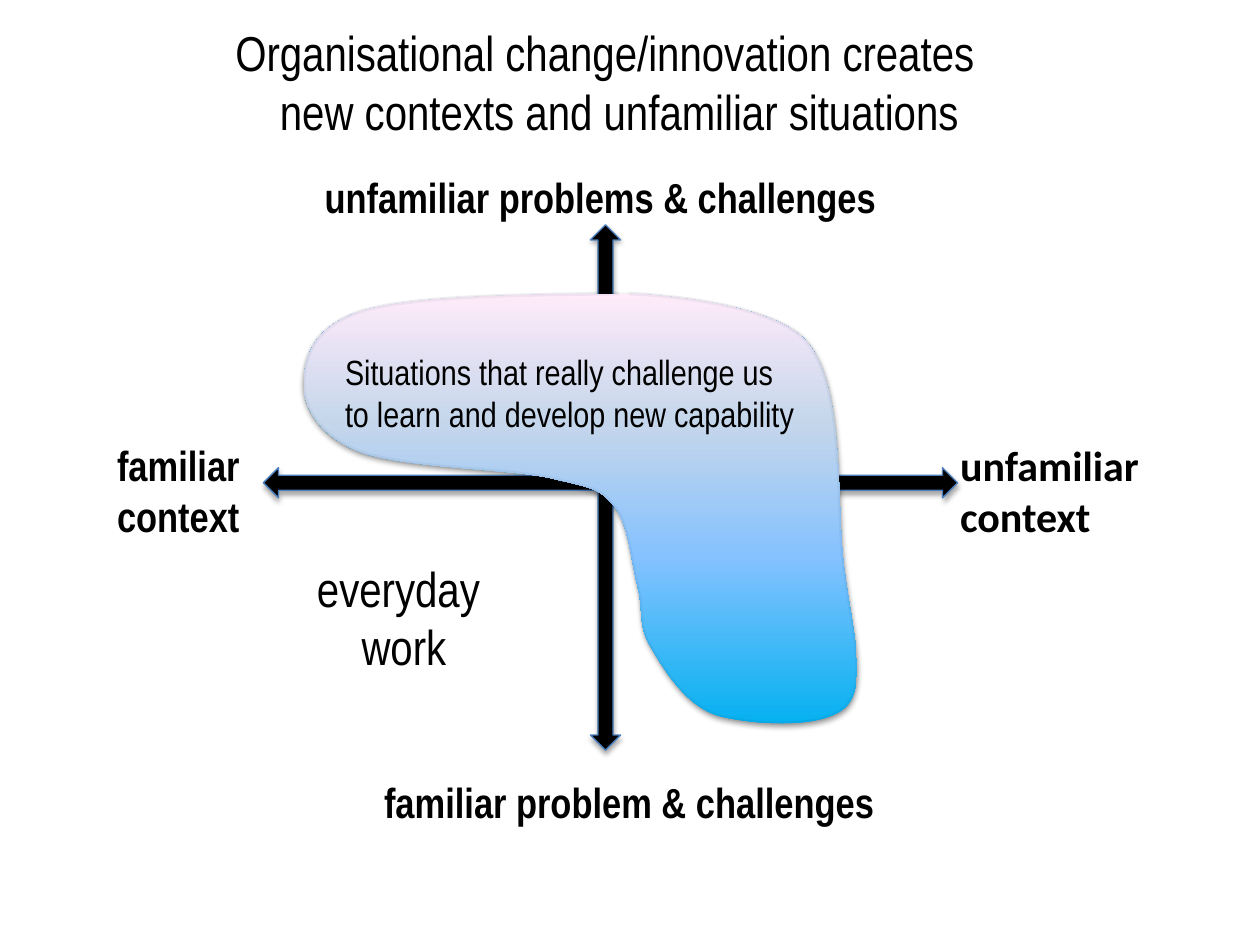
from dataclasses import dataclass

from lxml.etree import SubElement
from pptx import Presentation
from pptx.dml.color import RGBColor
from pptx.enum.shapes import MSO_SHAPE
from pptx.enum.text import MSO_AUTO_SIZE
from pptx.oxml.ns import qn
from pptx.util import Pt


@dataclass(frozen=True)
class Theme:
    ink: str = "000000"
    axis_edge: str = "4B7EBC"
    zone_edge: str = "254061"
    zone_stops: tuple = ((0, "00B0F0"), (40, "85C2FF"), (70, "C4D6EB"), (100, "FFEBFA"))
    narrow: str = "Arial Narrow"
    plain: str = "Calibri"
    heading: int = 28
    label: int = 24
    body: int = 20


THEME = Theme()

# Outline of the challenge zone in points from its top left corner:
# each row holds two control points and the end of one curve.
ZONE_START = (180.7, 0)
ZONE_CURVES = (
    ((123.1, 0.7), (65.5, 1.4), (36, 9.4)),
    ((5.8, 18), (1.4, 36.7), (0.7, 50.4)),
    ((0, 63.4), (8.6, 80.6), (31.7, 90)),
    ((55.4, 99.4), (115.9, 100.1), (140.4, 105.1)),
    ((164.9, 110.9), (169.2, 110.9), (177.8, 121)),
    ((186.5, 131), (187.9, 153.4), (191.5, 167)),
    ((195.1, 180.7), (191.5, 190.1), (199.4, 202.3)),
    ((206.6, 214.6), (218.9, 235.4), (237.6, 241.2)),
    ((256.3, 246.2), (299.5, 249.8), (311.8, 234.7)),
    ((323.3, 219.6), (312.5, 185.8), (308.9, 151.2)),
    ((305.3, 116.6), (309.6, 53.3), (288.7, 28.1)),
    ((268.6, 2.9), (186.5, 0), (186.5, 0)),
)


def rgb(code):
    return RGBColor.from_string(code)


def add_color(parent, code, alpha=None):
    color = SubElement(parent, qn("a:srgbClr"), val=code)
    if alpha is not None:
        SubElement(color, qn("a:alpha"), val=str(alpha * 1000))


def drop_shadow(shape, alpha, distance):
    """Give the shape a soft shadow straight below it."""
    shape.shadow.inherit = False
    effects = shape.element.spPr.find(qn("a:effectLst"))
    shadow = SubElement(effects, qn("a:outerShdw"), blurRad=str(Pt(3.1)),
                        dist=str(Pt(distance)), dir="5400000", rotWithShape="0")
    add_color(shadow, THEME.ink, alpha)


def add_text(slide, box, lines, size, font=THEME.narrow, bold=False, indents=(0, 0)):
    """Write one paragraph per line, each with its own left indent."""
    frame = slide.shapes.add_textbox(*map(Pt, box)).text_frame
    frame.word_wrap = True
    frame.auto_size = MSO_AUTO_SIZE.SHAPE_TO_FIT_TEXT
    frame.text = "\n".join(lines)
    for paragraph, indent in zip(frame.paragraphs, indents):
        if indent:
            paragraph._p.get_or_add_pPr().set("marL", str(Pt(indent)))
        paragraph.font.name = font
        paragraph.font.size = Pt(size)
        paragraph.font.bold = bold
        paragraph.font.color.rgb = rgb(THEME.ink)


def add_axis(slide, center, length, rotation=0):
    thickness = 17.3
    x, y = center
    axis = slide.shapes.add_shape(
        MSO_SHAPE.LEFT_RIGHT_ARROW, Pt(x - length / 2), Pt(y - thickness / 2),
        Pt(length), Pt(thickness))
    axis.rotation = rotation
    axis.fill.solid()
    axis.fill.fore_color.rgb = rgb(THEME.ink)
    axis.line.color.rgb = rgb(THEME.axis_edge)
    axis.line.width = Pt(0.75)
    drop_shadow(axis, 35, 1.8)


def add_axes(slide, box):
    """Cross two double arrows and label their four ends."""
    left, top, width, height = box
    add_axis(slide, (left + width / 2, top + 147.4), width)
    add_axis(slide, (left + 195.5, top + height / 2), height, rotation=90)
    ends = (
        ((28, -34.2, 499, 36), ["unfamiliar problems & challenges"], THEME.narrow),
        ((61.9, 311.4, 340, 36), ["familiar problem & challenges"], THEME.narrow),
        ((-90.7, 119.2, 193, 65.5), ["familiar", "context"], THEME.narrow),
        ((391, 119.2, 193, 65.5), ["unfamiliar", "context"], THEME.plain),
    )
    for (x, y, w, h), lines, font in ends:
        add_text(slide, (left + x, top + y, w, h), lines, THEME.label, font, bold=True)


def draw_zone_outline(slide, left, top):
    """Trace all points as lines, then join each three into one curve."""
    builder = slide.shapes.build_freeform(*map(Pt, ZONE_START))
    builder.add_line_segments(
        [(Pt(x), Pt(y)) for curve in ZONE_CURVES for x, y in curve], close=False)
    zone = builder.convert_to_shape(Pt(left), Pt(top))
    outline = zone.element.find(".//" + qn("a:path"))
    segments = outline.findall(qn("a:lnTo"))
    for first in range(0, len(segments), 3):
        curve = SubElement(outline, qn("a:cubicBezTo"))
        for segment in segments[first:first + 3]:
            curve.append(segment[0])
            outline.remove(segment)
    return zone


def add_challenge_zone(slide, box):
    left, top, width, height = box
    zone = draw_zone_outline(slide, left, top)
    zone.fill.gradient()
    zone.fill.gradient_angle = 90
    stops = zone.element.spPr.find(".//" + qn("a:gsLst"))
    for old_stop in list(stops):
        stops.remove(old_stop)
    for position, code in THEME.zone_stops:
        add_color(SubElement(stops, qn("a:gs"), pos=str(position * 1000)), code)
    zone.line.color.rgb = rgb(THEME.zone_edge)
    zone.line.width = Pt(2)
    edge = zone.element.spPr.find(qn("a:ln")).find(".//" + qn("a:srgbClr"))
    SubElement(edge, qn("a:alpha"), val="5000")
    drop_shadow(zone, 38, 1.6)
    add_text(slide, (left + 17.3, top + 28.8, width - 39.6, 55.4),
             ["Situations that really challenge us", "to learn and develop new capability"],
             THEME.body)


def main():
    deck = Presentation()
    deck.slide_width, deck.slide_height = Pt(720), Pt(540)
    slide = deck.slides.add_slide(deck.slide_layouts[6])
    add_axes(slide, (150.5, 128.5, 396.7, 300.2))
    add_text(slide, (161.3, 315.4, 193, 75), ["everyday", "work"],
             THEME.heading, indents=(12.75, 38.2))
    add_challenge_zone(slide, (172.8, 167.8, 323.3, 249.1))
    add_text(slide, (127.4, 9.4, 470.9, 75),
             ["Organisational change/innovation creates",
              "new contexts and unfamiliar situations"],
             THEME.heading, indents=(0, 25.5))
    deck.save("out.pptx")


if __name__ == "__main__":
    main()
